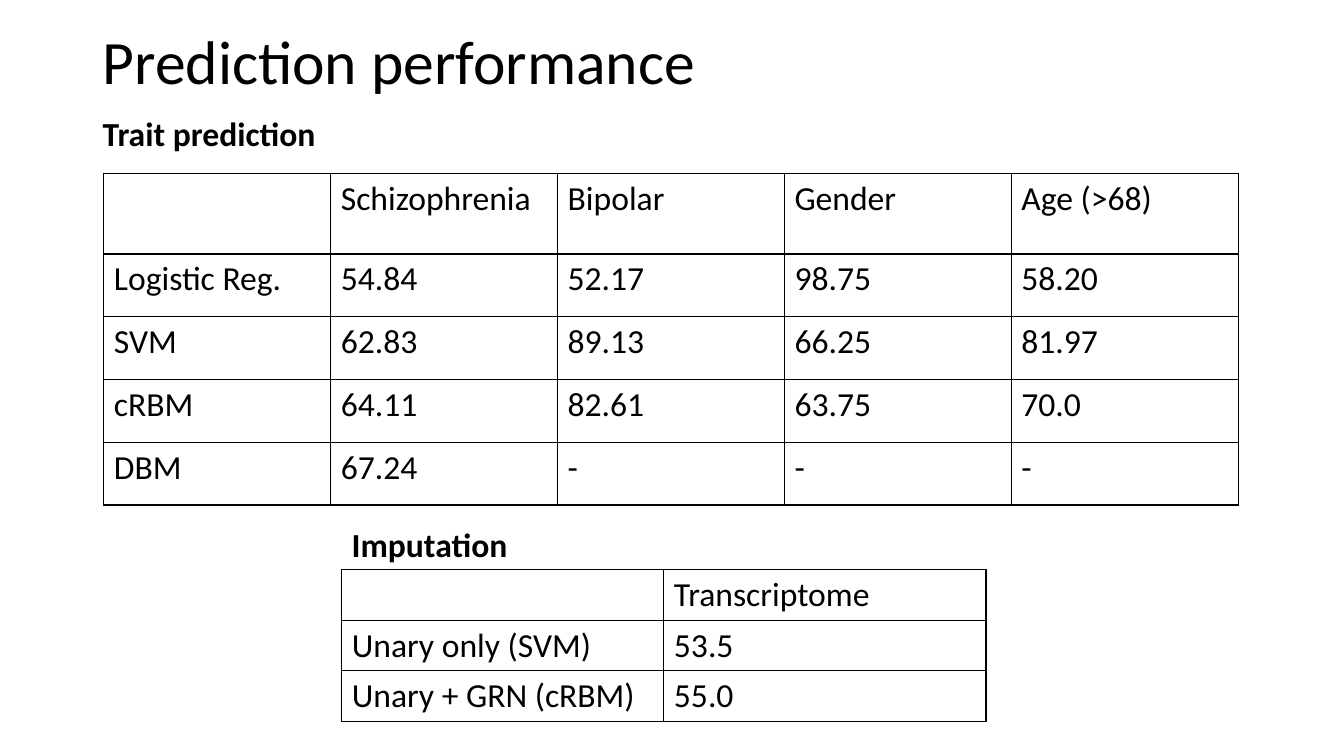
"""Build the prediction performance slide with its two result tables."""
import pptx
import pptx.dml.color
import pptx.enum.text
import pptx.oxml.ns
import pptx.util
from lxml import etree

COLORS = {"ink": "000000", "paper": "FFFFFF"}
FONT = "Calibri"
SLIDE_WIDTH = pptx.util.Inches(13.33)
SLIDE_HEIGHT = pptx.util.Inches(7.5)

TRAIT_ROWS = [
    ["", "Schizophrenia", "Bipolar", "Gender", "Age (>68)"],
    ["Logistic Reg.", "54.84", "52.17", "98.75", "58.20"],
    ["SVM", "62.83", "89.13", "66.25", "81.97"],
    ["cRBM", "64.11", "82.61", "63.75", "70.0"],
    ["DBM", "67.24", "-", "-", "-"],
]
IMPUTATION_ROWS = [
    ["", "Transcriptome"],
    ["Unary only (SVM)", "53.5"],
    ["Unary + GRN (cRBM)", "55.0"],
]


def across(percent):
    return round(SLIDE_WIDTH * percent / 100)


def down(percent):
    return round(SLIDE_HEIGHT * percent / 100)


def write_text(frame, text, size=24, bold=False, line_spacing=None):
    para = frame.paragraphs[0]
    para.line_spacing = line_spacing
    span = para.add_run()
    span.text = text
    span.font.name = FONT
    span.font.size = pptx.util.Pt(size)
    span.font.bold = bold
    span.font.color.rgb = pptx.dml.color.RGBColor.from_string(COLORS["ink"])


def add_label(page, text, left, top, width, height, middle=False, **text_format):
    box = page.shapes.add_textbox(across(left), down(top), across(width), down(height))
    box.text_frame.word_wrap = True
    if middle:
        box.text_frame.vertical_anchor = pptx.enum.text.MSO_ANCHOR.MIDDLE
    write_text(box.text_frame, text, **text_format)


def add_borders(cell):
    properties = cell._tc.get_or_add_tcPr()
    for side in ("a:lnL", "a:lnR", "a:lnT", "a:lnB"):
        line = etree.SubElement(properties, pptx.oxml.ns.qn(side), w=str(pptx.util.Pt(1)))
        fill = etree.SubElement(line, pptx.oxml.ns.qn("a:solidFill"))
        etree.SubElement(fill, pptx.oxml.ns.qn("a:srgbClr"), val=COLORS["ink"])


def add_results(page, rows, left, top, column_width, row_heights):
    frame = page.shapes.add_table(
        len(rows), len(rows[0]), across(left), down(top),
        across(column_width * len(rows[0])), down(sum(row_heights)))
    table = frame.table
    table.first_row = False
    table.horz_banding = False
    for column in table.columns:
        column.width = across(column_width)
    for row, height, texts in zip(table.rows, row_heights, rows):
        row.height = down(height)
        for cell, text in zip(row.cells, texts):
            add_borders(cell)
            cell.fill.solid()
            cell.fill.fore_color.rgb = pptx.dml.color.RGBColor.from_string(COLORS["paper"])
            if text:
                write_text(cell.text_frame, text)


def main():
    deck = pptx.Presentation()
    deck.slide_width = SLIDE_WIDTH
    deck.slide_height = SLIDE_HEIGHT
    page = deck.slides.add_slide(deck.slide_layouts[6])

    add_label(page, "Prediction performance", 6.9, 2.8, 70.9, 11.47,
              middle=True, size=44, line_spacing=0.9)
    add_label(page, "Trait prediction", 6.9, 14.27, 18.53, 6.67, bold=True)
    add_results(page, TRAIT_ROWS, 7.73, 22.93, 16.88, [10.67] + [8.3] * 4)
    add_label(page, "Imputation", 25.43, 68.67, 18.53, 6.67, bold=True)
    add_results(page, IMPUTATION_ROWS, 25.43, 75.33, 23.97, [6.7] * 3)

    deck.save("out.pptx")


if __name__ == "__main__":
    main()
